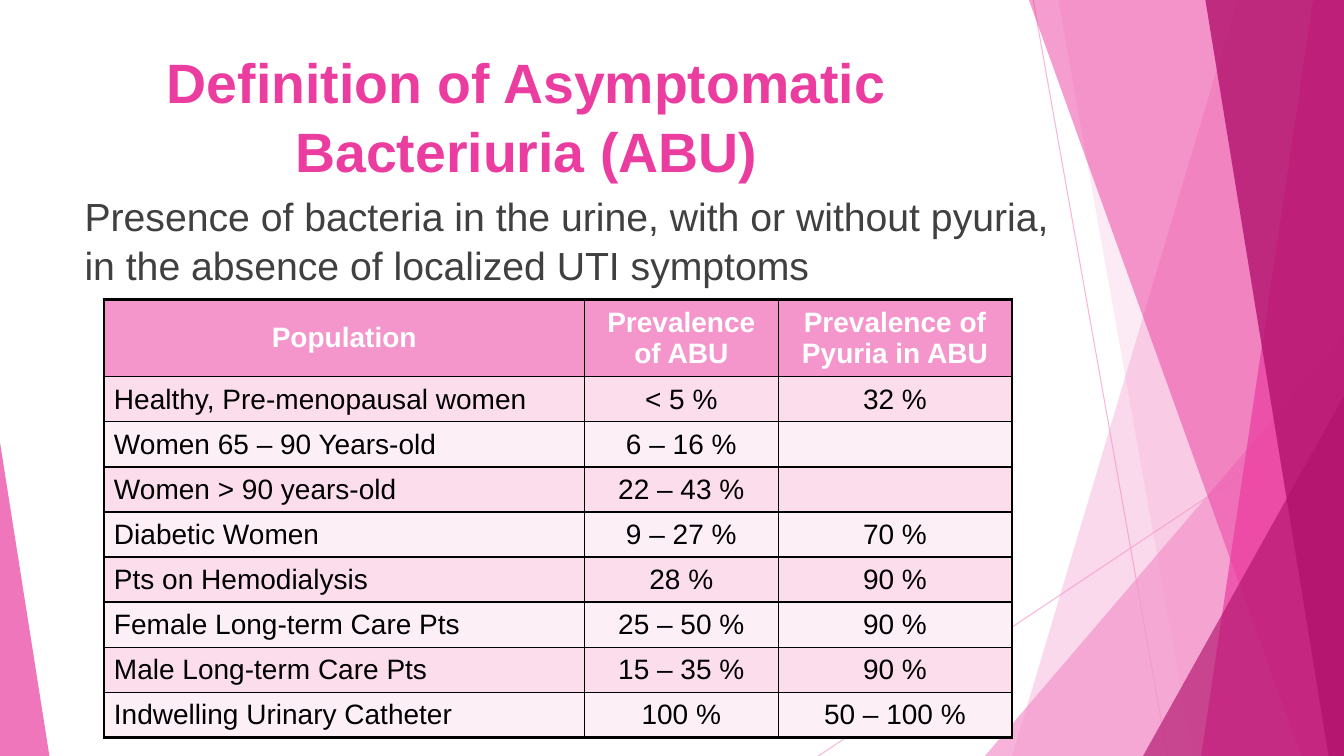
from pptx import Presentation
from pptx.dml.color import RGBColor
from pptx.enum.shapes import MSO_CONNECTOR, MSO_SHAPE
from pptx.enum.text import MSO_ANCHOR, MSO_AUTO_SIZE, PP_ALIGN
from pptx.oxml.ns import qn
from pptx.util import Pt
from lxml.etree import SubElement

W, H = 960, 540
PINK, ROSE, PLUM = "F496CB", "EB3D9F", "B2136D"
BLACK, WHITE, GREY = "000000", "FFFFFF", "404040"
STRIPES = ["FBDDEC", "FDEFF6"]
COLUMNS = [343.4, 138.2, 167]
HEADER_HEIGHT, ROW_HEIGHT = 55.4, 32.2
ROWS = [
    ("Population", "Prevalence of ABU", "Prevalence of Pyuria in ABU"),
    ("Healthy, Pre-menopausal women", "< 5 %", "32 %"),
    ("Women 65 – 90 Years-old", "6 – 16 %", ""),
    ("Women > 90 years-old", "22 – 43 %", ""),
    ("Diabetic Women", "9 – 27 %", "70 %"),
    ("Pts on Hemodialysis", "28 %", "90 %"),
    ("Female Long-term Care Pts", "25 – 50 %", "90 %"),
    ("Male Long-term Care Pts", "15 – 35 %", "90 %"),
    ("Indwelling Urinary Catheter", "100 %", "50 – 100 %"),
]


def rgb(color):
    """Turn a hex string into a colour."""
    return RGBColor.from_string(color)


def set_alpha(fill, color, percent):
    """Give a fill a solid colour with the given opacity."""
    fill.solid()
    fill.fore_color.rgb = rgb(color)
    srgb = fill._xPr.find(".//" + qn("a:srgbClr"))
    SubElement(srgb, qn("a:alpha"), val=str(percent * 1000))


def write(tf, text, size=20, color=BLACK, bold=False, align=PP_ALIGN.LEFT, spacing=None):
    """Write one formatted paragraph into a text frame."""
    p = tf.paragraphs[0]
    p.alignment = align
    p.line_spacing = spacing
    r = p.add_run()
    r.text = text
    r.font.name = "Arial"
    r.font.size = Pt(size)
    r.font.bold = bold
    r.font.color.rgb = rgb(color)


def finish(sp, color, alpha):
    """Fill a decorative shape and drop its outline and shadow."""
    sp.shadow.inherit = False
    sp.line.fill.background()
    set_alpha(sp.fill, color, alpha)


def add_ray(s, x1, y1, x2, y2):
    """Draw a thin translucent line."""
    ray = s.shapes.add_connector(MSO_CONNECTOR.STRAIGHT, Pt(x1), Pt(y1), Pt(x2), Pt(y2))
    ray.line.width = Pt(0.75)
    set_alpha(ray.line.fill, PINK, 70)
    SubElement(ray._element.spPr, qn("a:effectLst"))


def add_band(s, top_x, bottom_x, color, alpha):
    """Draw a full-height band from a slanted edge to the right side."""
    fb = s.shapes.build_freeform(Pt(top_x), 0)
    fb.add_line_segments([(Pt(x), Pt(y)) for x, y in [(W, 0), (W, H), (bottom_x, H)]])
    finish(fb.convert_to_shape(), color, alpha)


def add_corner(s, x, y, width, apex, color, alpha):
    """Draw a triangle that stands on the bottom edge."""
    sp = s.shapes.add_shape(MSO_SHAPE.ISOSCELES_TRIANGLE, Pt(x), Pt(y), Pt(width), Pt(H - y))
    sp.adjustments[0] = apex
    finish(sp, color, alpha)


def add_facets(s):
    """Draw the overlapping facets at both sides."""
    add_ray(s, 738, 0, 834, H)
    add_ray(s, W, 290, 584.6, H)
    add_band(s, 884, 723, PINK, 36)
    add_band(s, 756, 852, PINK, 20)
    add_corner(s, 703.5, 240, W - 703.5, 1, PINK, 72)
    add_band(s, 735, 929.5, ROSE, 50)
    add_band(s, 938, 858, ROSE, 70)
    add_band(s, 861, 949, PLUM, 80)
    add_corner(s, 816.5, 283, W - 816.5, 1, PLUM, 66)
    add_corner(s, 0, 316, 35.3, 0, ROSE, 70)


def add_title(s, x, y, w, h):
    """Place and fill the title placeholder."""
    sp = s.shapes.title
    sp.left, sp.top, sp.width, sp.height = Pt(x), Pt(y), Pt(w), Pt(h)
    tf = sp.text_frame
    tf.auto_size = MSO_AUTO_SIZE.NONE
    tf.vertical_anchor = MSO_ANCHOR.MIDDLE
    write(tf, "Definition of Asymptomatic Bacteriuria (ABU)", size=39.6,
          color=ROSE, bold=True, align=PP_ALIGN.CENTER, spacing=1.05)


def add_definition(s, x, y, w, h):
    """Place the definition below the title."""
    tf = s.shapes.add_textbox(Pt(x), Pt(y), Pt(w), Pt(h)).text_frame
    tf.word_wrap = True
    write(tf, "Presence of bacteria in the urine, with or without pyuria, "
          "in the absence of localized UTI symptoms", size=28, color=GREY, spacing=1.05)


def set_borders(cell, outer):
    """Draw black borders, thicker on the sides at the table's edge."""
    tcPr = cell._tc.get_or_add_tcPr()
    for i, (side, at_edge) in enumerate(outer.items()):
        width = Pt(2.25 if at_edge else 1)
        ln = tcPr.makeelement(qn("a:" + side), {"w": str(width)})
        SubElement(SubElement(ln, qn("a:solidFill")), qn("a:srgbClr"), val=BLACK)
        tcPr.insert(i, ln)


def add_prevalence_table(s, x, y):
    """Build the prevalence table from its top-left corner."""
    last_row, last_col = len(ROWS) - 1, len(COLUMNS) - 1
    height = HEADER_HEIGHT + last_row * ROW_HEIGHT
    table = s.shapes.add_table(len(ROWS), len(COLUMNS), Pt(x), Pt(y),
                               Pt(sum(COLUMNS)), Pt(height)).table
    for column, width in zip(table.columns, COLUMNS):
        column.width = Pt(width)
    for i, values in enumerate(ROWS):
        header = i == 0
        table.rows[i].height = Pt(HEADER_HEIGHT if header else ROW_HEIGHT)
        for j, value in enumerate(values):
            cell = table.cell(i, j)
            cell.vertical_anchor = MSO_ANCHOR.MIDDLE
            cell.fill.solid()
            cell.fill.fore_color.rgb = rgb(PINK if header else STRIPES[(i - 1) % 2])
            set_borders(cell, {"lnL": j == 0, "lnR": j == last_col,
                               "lnT": header, "lnB": i == last_row})
            if value:
                write(cell.text_frame, value, color=WHITE if header else BLACK, bold=header,
                      align=PP_ALIGN.CENTER if header or j else PP_ALIGN.LEFT)


def main():
    """Build the slide and save it."""
    prs = Presentation()
    prs.slide_width, prs.slide_height = Pt(W), Pt(H)
    s = prs.slides.add_slide(prs.slide_layouts[5])
    add_facets(s)
    add_title(s, 32.4, 26, 687, 111)
    add_definition(s, 53.3, 131.8, 713.5, 80)
    add_prevalence_table(s, 74.2, 213.8)
    prs.save("out.pptx")


if __name__ == "__main__":
    main()
